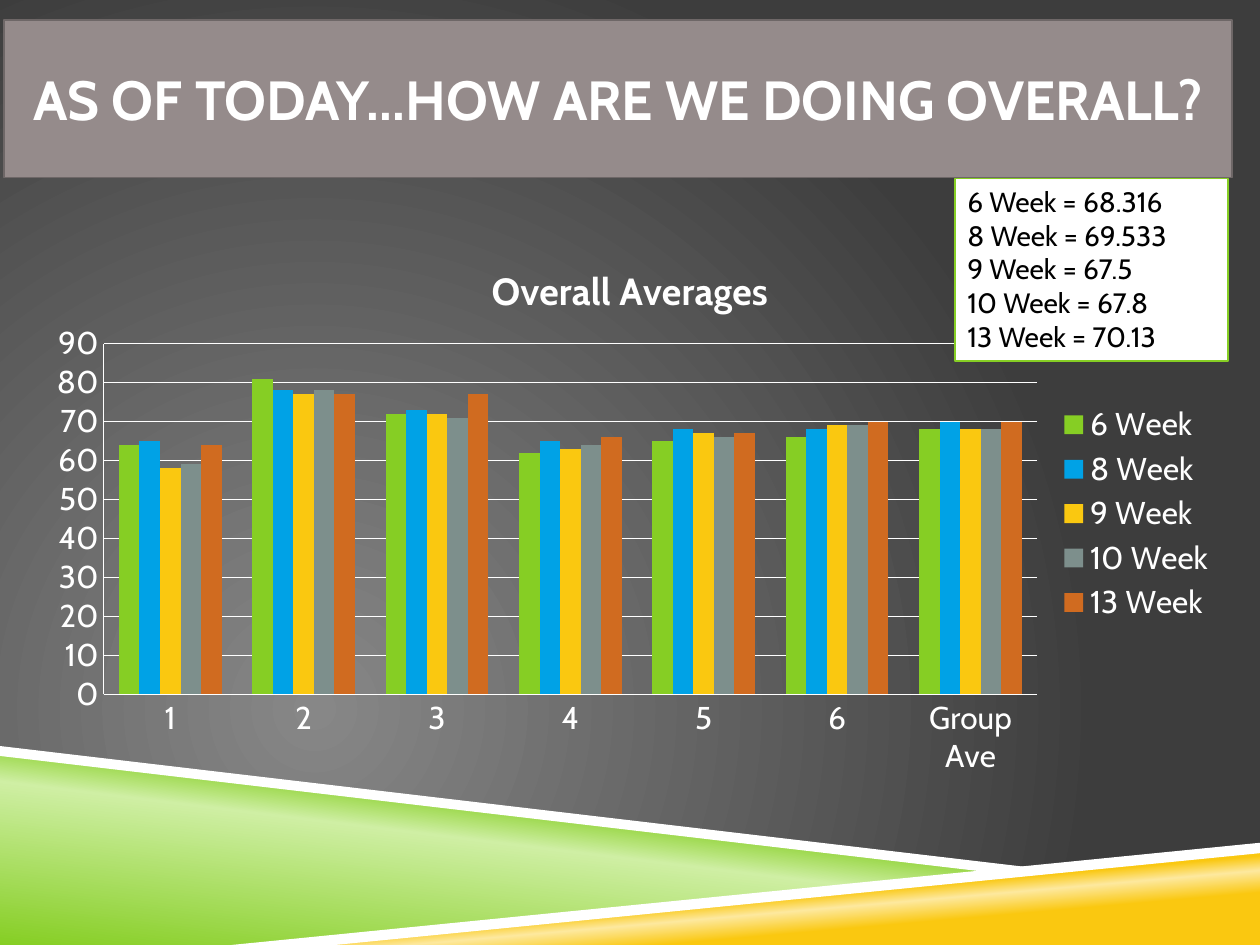
from lxml.etree import SubElement
from pptx import Presentation
from pptx.chart.data import CategoryChartData
from pptx.dml.color import RGBColor
from pptx.enum.chart import XL_CHART_TYPE, XL_LEGEND_POSITION, XL_TICK_MARK
from pptx.enum.shapes import MSO_SHAPE
from pptx.enum.text import MSO_ANCHOR, MSO_AUTO_SIZE, PP_ALIGN
from pptx.oxml import parse_xml
from pptx.oxml.ns import nsdecls, qn
from pptx.util import Cm, Pt

COLORS = {
    "white": "FFFFFF", "black": "000000", "taupe": "958B8B", "taupe_line": "6E6767",
    "green": "86CE24", "pale_green": "CFEFA4", "blue": "00A2E6", "yellow": "FAC810",
    "pale_yellow": "FDE99F", "grey": "7D8F8C", "orange": "D06B20",
    "bg_light": "878787", "bg_dark": "3D3D3D",
}
CATEGORIES = ["1", "2", "3", "4", "5", "6", "Group Ave"]
SERIES = [
    ("6 Week", "green", (64, 81, 72, 62, 65, 66, 68)),
    ("8 Week", "blue", (65, 78, 73, 65, 68, 68, 70)),
    ("9 Week", "yellow", (58, 77, 72, 63, 67, 69, 68)),
    ("10 Week", "grey", (59, 78, 71, 64, 66, 69, 68)),
    ("13 Week", "orange", (64, 77, 77, 66, 67, 70, 70)),
]
AVERAGES = ["6 Week = 68.316", "8 Week = 69.533", "9 Week = 67.5",
            "10 Week = 67.8", "13 Week = 70.13"]


def rgb(name):
    return RGBColor.from_string(COLORS[name])


def gradient_xml(stops, direction):
    """Gradient fill from (percent, colour) stops and a lin or path element."""
    gs = "".join(f'<a:gs pos="{pos * 1000}"><a:srgbClr val="{COLORS[c]}"/></a:gs>'
                 for pos, c in stops)
    return f'<a:gradFill rotWithShape="1"><a:gsLst>{gs}</a:gsLst>{direction}</a:gradFill>'


class SlideBuilder:
    font = "Cabin"

    def __init__(self, prs):
        self.s = prs.slides.add_slide(prs.slide_layouts[5])

    def style_font(self, font, size, color, bold=False):
        font.name, font.size, font.bold = self.font, Pt(size), bold
        font.color.rgb = rgb(color)

    def add_run(self, p, text, size, color, bold=False):
        r = p.add_run()
        r.text = text
        self.style_font(r.font, size, color, bold)

    def paint(self, sp, fill, line):
        sp.fill.solid()
        sp.fill.fore_color.rgb = rgb(fill)
        sp.line.color.rgb = rgb(line)
        sp.line.width = Pt(1)

    def background(self, stops):
        path = '<a:path path="circle"><a:fillToRect l="50000" t="100000" r="100000" b="50000"/></a:path>'
        self.s.background.fill.solid()
        bg_pr = self.s.element.find(".//" + qn("p:bgPr"))
        bg_pr.replace(bg_pr[0], parse_xml(
            gradient_xml(stops, path).replace("<a:gradFill", f"<a:gradFill {nsdecls('a')}", 1)))

    def polygon(self, points, color="white", stops=None, angle=0):
        pts = [(Cm(x), Cm(y)) for x, y in points]
        fb = self.s.shapes.build_freeform(*pts[0])
        fb.add_line_segments(pts[1:], close=True)
        sp = fb.convert_to_shape()
        sp.shadow.inherit = False
        sp.line.fill.background()
        sp.fill.solid()
        sp.fill.fore_color.rgb = rgb(color)
        if stops:
            xml = gradient_xml(stops, f'<a:lin ang="{angle * 60000}" scaled="0"/>')
            sp_pr = sp.element.spPr
            sp_pr.replace(sp_pr.find(qn("a:solidFill")), parse_xml(
                xml.replace("<a:gradFill", f"<a:gradFill {nsdecls('a')}", 1)))

    def title(self, text, left, top, width, height):
        sp = self.s.shapes.title
        sp.element.getparent().append(sp.element)  # in front of the polygons
        sp.left, sp.top, sp.width, sp.height = Cm(left), Cm(top), Cm(width), Cm(height)
        self.paint(sp, "taupe", "taupe_line")
        tf = sp.text_frame
        tf.auto_size = MSO_AUTO_SIZE.NONE
        tf.vertical_anchor = MSO_ANCHOR.MIDDLE
        tf.margin_left = tf.margin_right = 0
        p = tf.paragraphs[0]
        p.alignment = PP_ALIGN.CENTER
        self.add_run(p, text, 31.5, "white", True)

    def note(self, lines, left, top, width, height):
        sp = self.s.shapes.add_shape(MSO_SHAPE.RECTANGLE, Cm(left), Cm(top), Cm(width), Cm(height))
        sp.shadow.inherit = False
        self.paint(sp, "white", "green")
        tf = sp.text_frame
        tf.word_wrap = True
        tf.auto_size = MSO_AUTO_SIZE.SHAPE_TO_FIT_TEXT
        tf.vertical_anchor = MSO_ANCHOR.TOP
        for i, line in enumerate(lines):
            p = tf.add_paragraph() if i else tf.paragraphs[0]
            p.alignment = PP_ALIGN.LEFT
            self.add_run(p, line, 16, "black")

    def column_chart(self, title, left, top, width, height):
        data = CategoryChartData()
        data.categories = CATEGORIES
        for name, _, values in SERIES:
            data.add_series(name, values)
        chart = self.s.shapes.add_chart(XL_CHART_TYPE.COLUMN_CLUSTERED, Cm(left), Cm(top),
                                        Cm(width), Cm(height), data).chart
        self.style_font(chart.font, 18, "white")
        chart.has_title = True
        self.add_run(chart.chart_title.text_frame.paragraphs[0], title, 21.6, "white", True)
        chart.chart_title.include_in_layout = False
        chart.has_legend = True
        chart.legend.position = XL_LEGEND_POSITION.RIGHT
        chart.legend.include_in_layout = False

        plot = chart.plots[0]
        plot.gap_width, plot.overlap, plot.vary_by_categories = 150, 0, False
        for series, (_, color, _) in zip(plot.series, SERIES):
            series.format.fill.solid()
            series.format.fill.fore_color.rgb = rgb(color)

        values = chart.value_axis
        values.minimum_scale, values.maximum_scale, values.major_unit = 0, 90, 10
        values.has_major_gridlines = True
        for axis in (chart.category_axis, values):
            axis.major_tick_mark = axis.minor_tick_mark = XL_TICK_MARK.NONE
        for lines in (chart.category_axis, values, values.major_gridlines):
            lines.format.line.color.rgb = rgb("white")
            lines.format.line.width = Pt(0.75)
        self.place_plot(chart, x=0.06, y=0.19, w=0.78, h=0.64)

    def place_plot(self, chart, **fractions):
        area = chart.element.find(".//" + qn("c:plotArea"))
        for old in area.findall(qn("c:layout")):
            area.remove(old)
        layout = parse_xml(f"<c:layout {nsdecls('c')}><c:manualLayout/></c:layout>")
        settings = {"layoutTarget": "inner", "xMode": "edge", "yMode": "edge", **fractions}
        for tag, value in settings.items():
            SubElement(layout[0], qn("c:" + tag)).set("val", str(value))
        area.insert(0, layout)


def main():
    prs = Presentation()
    prs.slide_width, prs.slide_height = Cm(25.4), Cm(19.05)
    b = SlideBuilder(prs)
    b.background([(0, "bg_light"), (100, "bg_dark")])
    b.polygon([(0, 15.16), (20.12, 17.58), (5.08, 19.05), (0, 19.05)],
              stops=[(0, "green"), (52, "pale_green"), (66, "green")], angle=277)
    b.polygon([(5.03, 19.05), (25.4, 17.07), (25.4, 19.05)],
              stops=[(28, "yellow"), (40, "pale_yellow"), (48, "yellow")], angle=265)
    b.polygon([(0, 15.04), (0, 15.24), (20.07, 17.6), (21.13, 17.53)])
    b.polygon([(25.4, 16.99), (4.67, 19.05), (6.76, 19.05), (25.4, 17.2)])
    b.title("AS OF TODAY…HOW ARE WE DOING OVERALL?", 0.08, 0.4, 24.76, 3.18)
    b.column_chart("Overall Averages", 0.64, 4.83, 24.13, 11.05)
    b.note(AVERAGES, 19.25, 3.6, 5.51, 3.68)
    prs.save("out.pptx")


if __name__ == "__main__":
    main()
